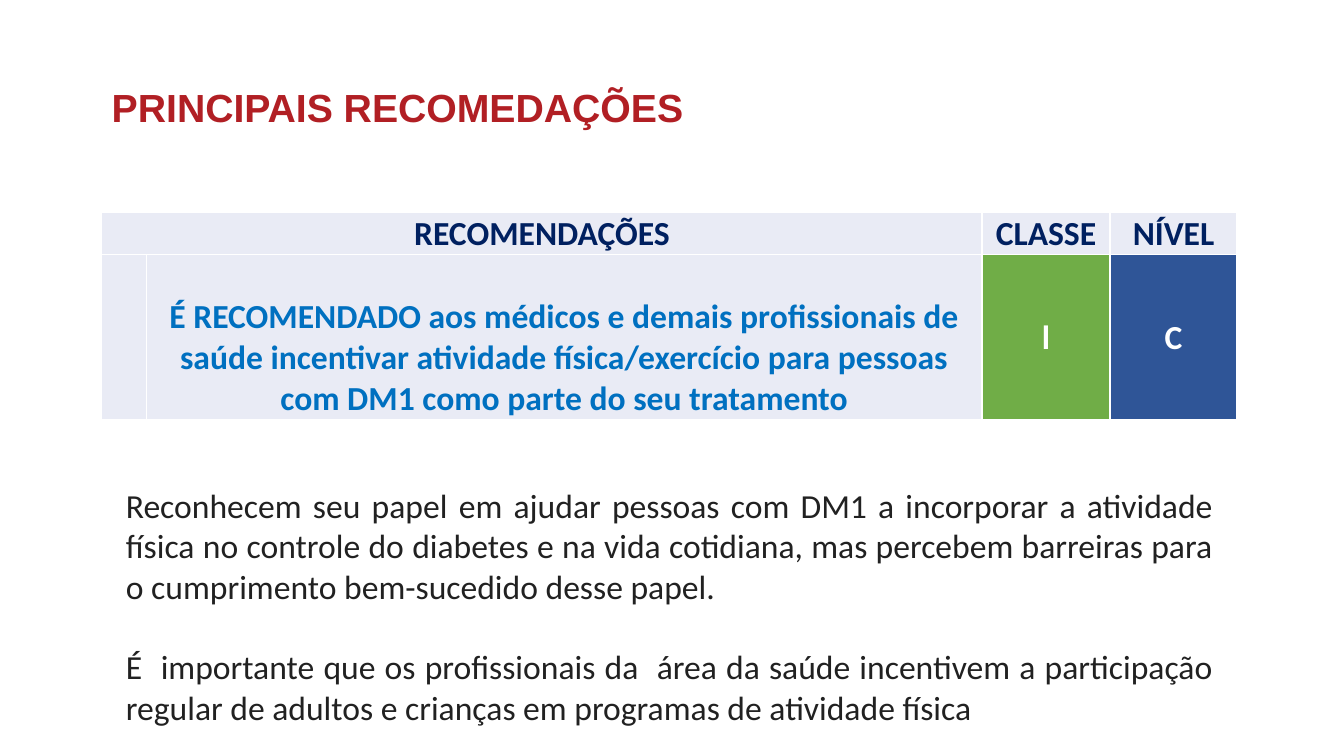
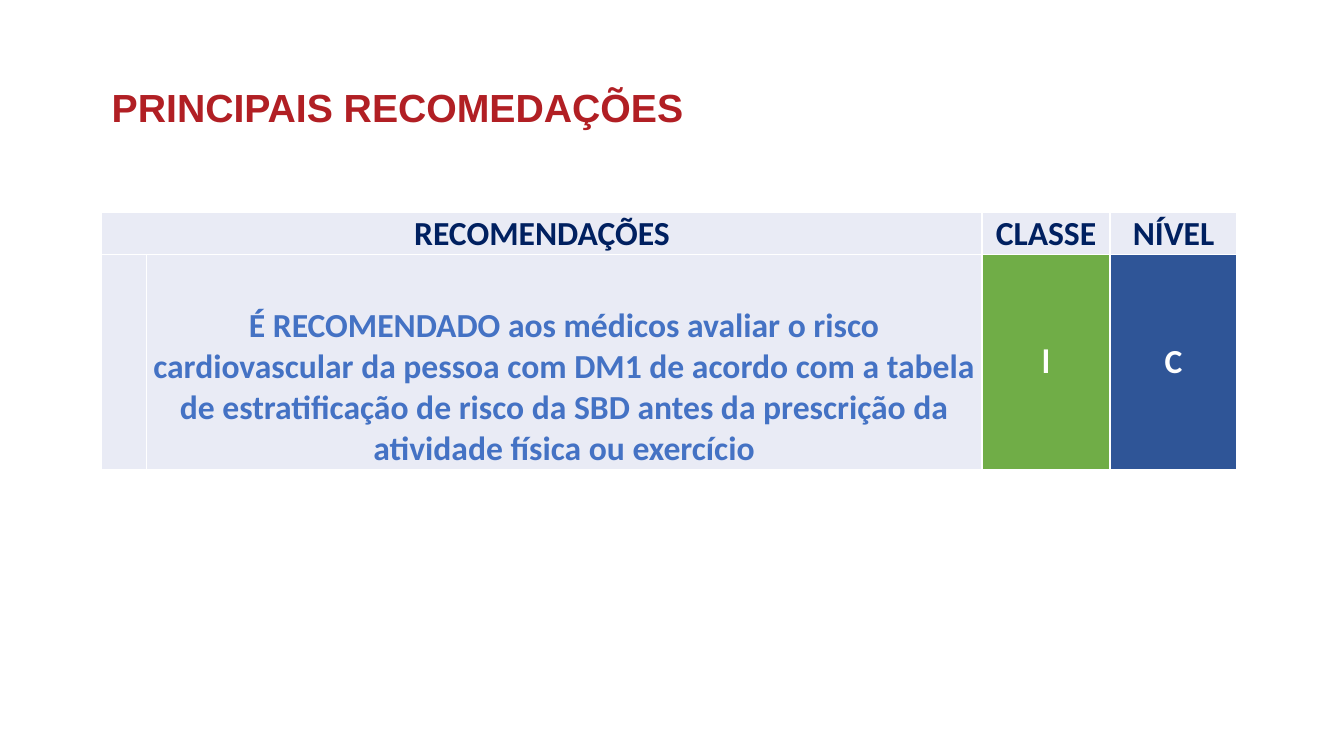
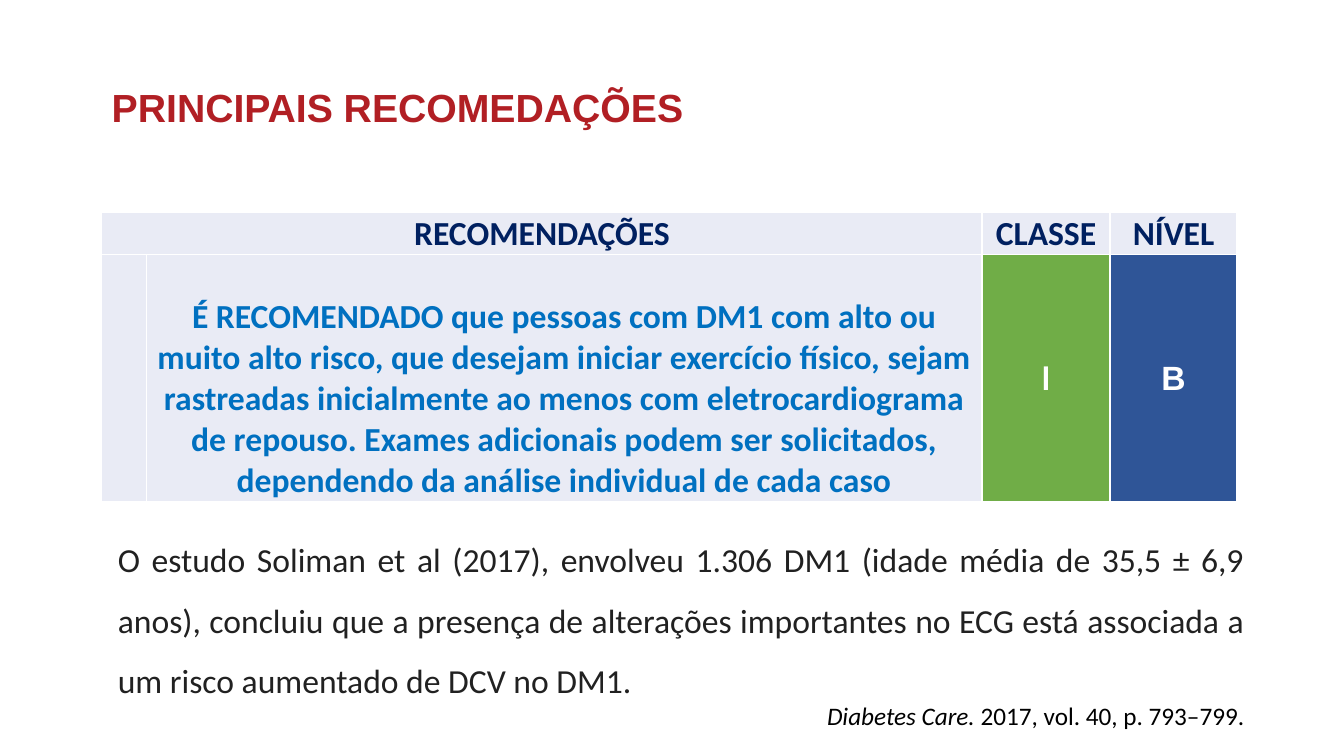
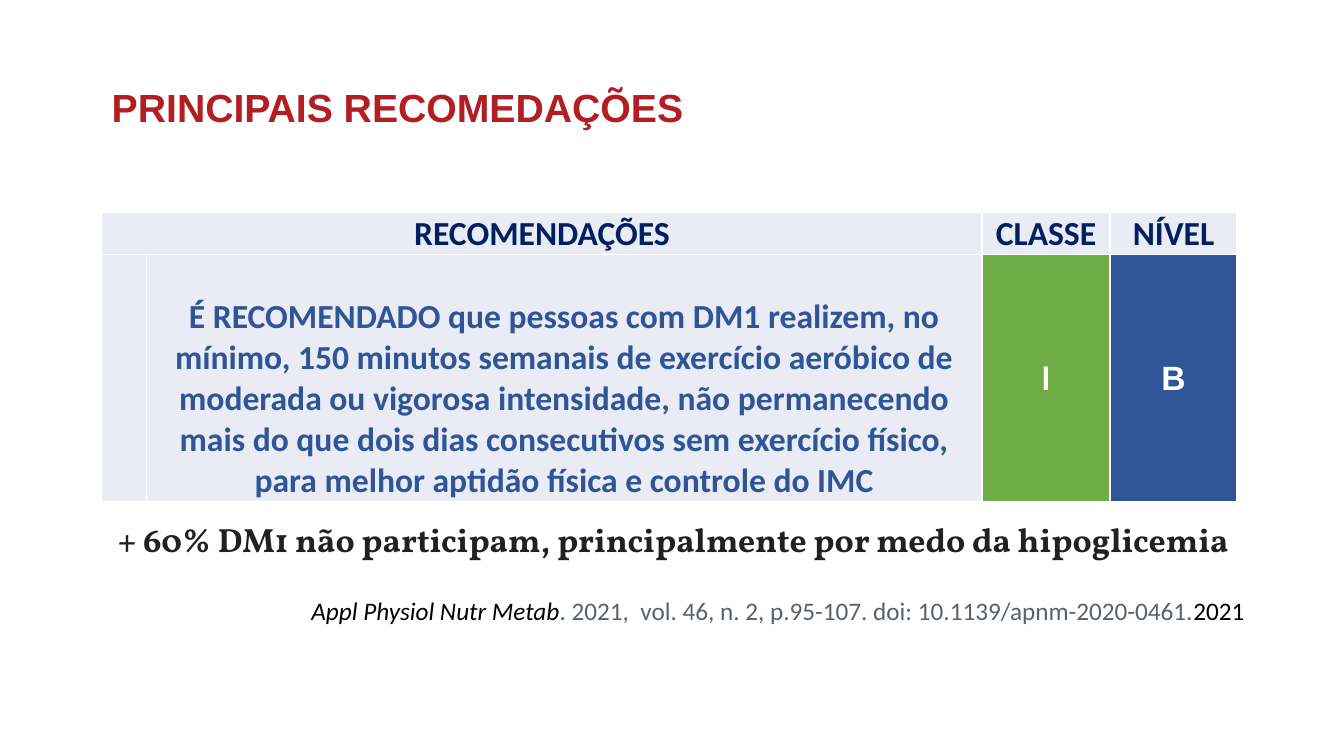
"""Build four slides of recommendations on exercise in type 1 diabetes."""
from lxml.etree import SubElement
from pptx import Presentation
from pptx.dml.color import RGBColor
from pptx.enum.text import MSO_ANCHOR, PP_ALIGN
from pptx.oxml.ns import qn
from pptx.util import Inches, Pt

RED = RGBColor(0xB1, 0x1F, 0x24)
NAVY = RGBColor(0x00, 0x20, 0x60)
BLUE = RGBColor(0x00, 0x70, 0xC0)
SOFT_BLUE = RGBColor(0x44, 0x72, 0xC4)
DEEP_BLUE = RGBColor(0x2F, 0x55, 0x97)
LINK_BLUE = RGBColor(0x00, 0x71, 0xBC)
GREEN = RGBColor(0x70, 0xAD, 0x47)
PALE = RGBColor(0xE9, 0xEB, 0xF5)
INK = RGBColor(0x21, 0x21, 0x21)
GREY = RGBColor(0x5B, 0x61, 0x6B)
BLACK = RGBColor(0x00, 0x00, 0x00)
WHITE = RGBColor(0xFF, 0xFF, 0xFF)


def write_span(para, text, size=24, font="Calibri", color=INK, bold=False, italic=False):
    span = para.add_run()
    span.text = text
    span.font.size = Pt(size)
    span.font.name = font
    span.font.color.rgb = color
    span.font.bold = bold
    span.font.italic = italic


class Deck:
    LEFT = 7.58
    WIDTH = 84.47
    COLUMNS = (3.3, 62.19, 9.53, 9.45)
    HEADER_HEIGHT = 5.56

    def __init__(self):
        self.file = Presentation()
        self.file.slide_width = Inches(13.33)
        self.file.slide_height = Inches(7.5)
        self.page = None

    def across(self, percent):
        return round(self.file.slide_width * percent / 100)

    def down(self, percent):
        return round(self.file.slide_height * percent / 100)

    def area(self, left, top, width, height):
        return self.across(left), self.down(top), self.across(width), self.down(height)

    def add_page(self):
        self.page = self.file.slides.add_slide(self.file.slide_layouts[6])
        heading = [("PRINCIPAIS RECOMEDAÇÕES", dict(size=28, font="Arial", color=RED, bold=True))]
        self.add_text((self.LEFT, 11.07, self.WIDTH, 6.53), [(heading, dict(line_spacing=0.9))])

    def add_text(self, place, paragraphs):
        frame = self.page.shapes.add_textbox(*self.area(*place)).text_frame
        frame.word_wrap = True
        for index, (spans, layout) in enumerate(paragraphs):
            para = frame.add_paragraph() if index else frame.paragraphs[0]
            for name, value in layout.items():
                setattr(para, name, value)
            for text, look in spans:
                write_span(para, text, **look)

    def fill_cell(self, cell, fill, text="", anchor=MSO_ANCHOR.BOTTOM, **look):
        cell.margin_left = cell.margin_right = cell.margin_top = Inches(0.01)
        cell.margin_bottom = 0
        cell.vertical_anchor = anchor
        if text:
            para = cell.text_frame.paragraphs[0]
            para.alignment = PP_ALIGN.CENTER
            write_span(para, text, bold=True, **look)
        properties = cell._tc.get_or_add_tcPr()
        for side in ("a:lnL", "a:lnR", "a:lnT", "a:lnB"):
            line = SubElement(properties, qn(side), w=str(Pt(1)))
            SubElement(SubElement(line, qn("a:solidFill")), qn("a:srgbClr"), val=str(WHITE))
        cell.fill.solid()
        cell.fill.fore_color.rgb = fill

    def add_recommendation(self, text, color, level, height, level_font="Calibri"):
        place = self.area(self.LEFT, 28.13, self.WIDTH, self.HEADER_HEIGHT + height)
        table = self.page.shapes.add_table(2, len(self.COLUMNS), *place).table
        table.first_row = table.horz_banding = False
        for column, width in zip(table.columns, self.COLUMNS):
            column.width = self.across(width)
        for row, share in zip(table.rows, (self.HEADER_HEIGHT, height)):
            row.height = self.down(share)
        table.cell(0, 0).merge(table.cell(0, 1))
        for column, label in enumerate(("RECOMENDAÇÕES", "", "CLASSE", "NÍVEL")):
            self.fill_cell(table.cell(0, column), PALE, label, color=NAVY)
        self.fill_cell(table.cell(1, 0), PALE)
        self.fill_cell(table.cell(1, 1), PALE, text, color=color)
        grade = dict(anchor=MSO_ANCHOR.MIDDLE, color=WHITE)
        self.fill_cell(table.cell(1, 2), GREEN, "l", **grade)
        self.fill_cell(table.cell(1, 3), DEEP_BLUE, level, font=level_font, **grade)


def main():
    deck = Deck()
    justified = dict(alignment=PP_ALIGN.JUSTIFY)
    right = dict(alignment=PP_ALIGN.RIGHT)
    source = dict(size=18, color=BLACK)
    journal = dict(source, italic=True)

    deck.add_page()
    deck.add_recommendation(
        "É RECOMENDADO aos médicos e demais profissionais de saúde incentivar atividade "
        "física/exercício para pessoas com DM1 como parte do seu tratamento",
        BLUE, "C", 21.87)
    role = (
        "Reconhecem seu papel em ajudar pessoas com DM1 a incorporar a atividade física no "
        "controle do diabetes e na vida cotidiana, mas percebem barreiras para o cumprimento "
        "bem-sucedido desse papel. ")
    incentive = (
        "É  importante que os profissionais da  área da saúde incentivem a participação "
        "regular de adultos e crianças em programas de atividade física")
    deck.add_text((8.63, 63.47, 82.37, 33.6), [
        ([(role, {})], justified),
        ([(incentive, {})], dict(justified, space_before=Pt(29)))])

    deck.add_page()
    deck.add_recommendation(
        "É RECOMENDADO aos médicos avaliar o risco cardiovascular da pessoa com DM1 de acordo "
        "com a tabela de estratificação de risco da SBD antes da prescrição da atividade "
        "física ou exercício",
        SOFT_BLUE, "C", 28.4)

    deck.add_page()
    deck.add_recommendation(
        "É RECOMENDADO que pessoas com DM1 com alto ou muito alto risco, que desejam iniciar "
        "exercício físico, sejam rastreadas inicialmente ao menos com eletrocardiograma de "
        "repouso. Exames adicionais podem ser solicitados, dependendo da análise individual "
        "de cada caso",
        BLUE, "B", 32.67, level_font="Arial")
    study = (
        "O estudo Soliman et al (2017), envolveu 1.306 DM1 (idade média de 35,5 ± 6,9 anos), "
        "concluiu que a presença de alterações importantes no ECG está associada a um risco "
        "aumentado de DCV no DM1. ")
    deck.add_text((8.03, 68, 85.3, 32), [
        ([(study, {})], dict(justified, line_spacing=1.5)),
        ([("Diabetes Care. ", journal), ("2017, vol. 40, p. 793–799.", source)], right)])

    deck.add_page()
    deck.add_recommendation(
        "É RECOMENDADO que pessoas com DM1 realizem, no mínimo, 150 minutos semanais de "
        "exercício aeróbico de moderada ou vigorosa intensidade, não permanecendo mais do que "
        "dois dias consecutivos sem exercício físico, para melhor aptidão física e controle "
        "do IMC",
        DEEP_BLUE, "B", 32.67, level_font="Arial")
    barrier = "+ 60% DM1 não participam, principalmente por medo da hipoglicemia"
    deck.add_text((8.03, 68, 85.3, 16.13), [
        ([(barrier, dict(font="Vollkorn", bold=True))], {}),
        ([("Appl Physiol Nutr Metab", journal),
          (". ", dict(source, color=LINK_BLUE)),
          ("2021,  vol. 46, n. 2, p.95-107. doi: 10.1139/apnm-2020-0461.",
           dict(source, color=GREY)),
          ("2021", source)], dict(right, space_before=Pt(26)))])

    deck.file.save("out.pptx")


if __name__ == "__main__":
    main()
